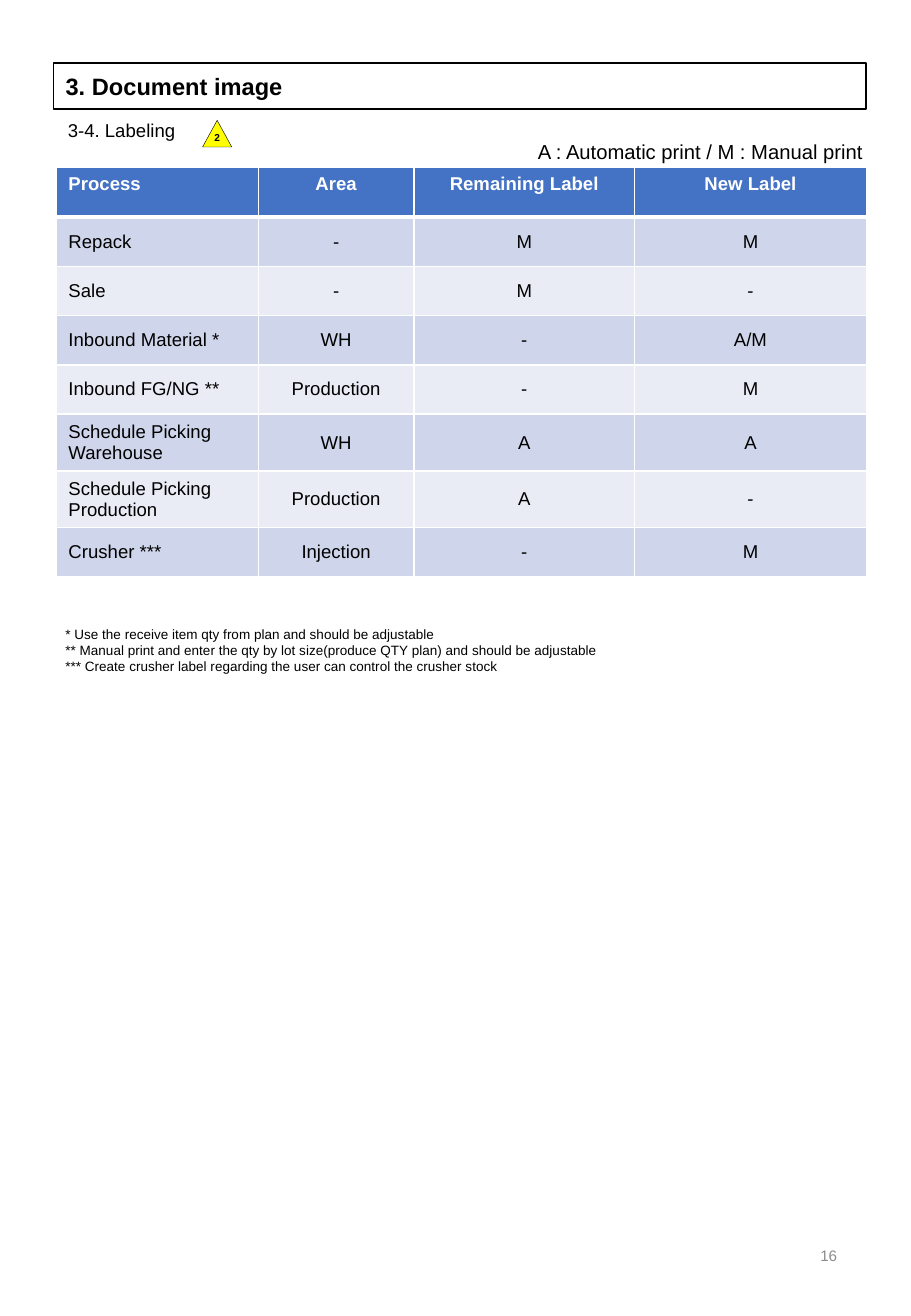
from dataclasses import dataclass

from lxml.etree import SubElement
from pptx import Presentation
from pptx.dml.color import RGBColor
from pptx.enum.shapes import MSO_SHAPE as SHAPE
from pptx.enum.text import MSO_ANCHOR as ANCHOR, MSO_AUTO_SIZE as AUTO, PP_ALIGN as ALIGN
from pptx.oxml.ns import qn
from pptx.util import Pt


@dataclass(frozen=True)
class Theme:
    """Colours, font and type sizes of the slide."""
    font: str = "Arial"
    black: str = "000000"
    white: str = "FFFFFF"
    grey: str = "8C8C8C"
    yellow: str = "FFFF00"
    header: str = "4472C4"
    bands: tuple = ("CFD5EA", "E9EBF5")
    title: int = 14
    legend: int = 12
    body: int = 11
    number: int = 9
    note: int = 8
    mark: int = 6


T = Theme()
COLUMNS = (119.8, 92.2, 130.8, 137.4)
ROW_HEIGHT = 29.2
LABELING = (
    ("Process", "Area", "Remaining Label", "New Label"),
    ("Repack", "-", "M", "M"),
    ("Sale", "-", "M", "-"),
    ("Inbound Material *", "WH", "-", "A/M"),
    ("Inbound FG/NG **", "Production", "-", "M"),
    ("Schedule Picking Warehouse", "WH", "A", "A"),
    ("Schedule Picking Production", "Production", "A", "-"),
    ("Crusher ***", "Injection", "-", "M"),
)
NOTES = (
    "* Use the receive item qty from plan and should be adjustable",
    "** Manual print and enter the qty by lot size(produce QTY plan) and should be adjustable",
    "*** Create crusher label regarding the user can control the crusher stock",
)


def rgb(value):
    """Return the colour object for a hex value."""
    return RGBColor.from_string(value)


def write(tf, lines, size, color=T.black, bold=False, align=ALIGN.LEFT):
    """Write one paragraph per line into a text frame."""
    for i, line in enumerate(lines):
        p = tf.add_paragraph() if i else tf.paragraphs[0]
        p.alignment = align
        r = p.add_run()
        r.text = line
        r.font.name, r.font.size, r.font.bold = T.font, Pt(size), bold
        r.font.color.rgb = rgb(color)


def outline(sp, width):
    """Give a shape a black line."""
    sp.line.color.rgb = rgb(T.black)
    sp.line.width = Pt(width)


def add_text(slide, box, lines, size, color=T.black, align=ALIGN.LEFT, anchor=ANCHOR.TOP):
    """Add a wrapping text box."""
    tf = slide.shapes.add_textbox(*map(Pt, box)).text_frame
    tf.word_wrap = True
    tf.vertical_anchor = anchor
    write(tf, lines, size, color, align=align)


def add_title(slide, box, text):
    """Place the framed title."""
    sp = slide.shapes.title
    sp.left, sp.top, sp.width, sp.height = map(Pt, box)
    outline(sp, 1)
    tf = sp.text_frame
    tf.auto_size = AUTO.NONE
    tf.vertical_anchor = ANCHOR.MIDDLE
    write(tf, [text], T.title, bold=True)


def add_heading(slide, box, text, mark):
    """Add the section heading with its revision triangle."""
    left, top, _, _ = box
    add_text(slide, box, [text], T.body)
    sp = slide.shapes.add_shape(
        SHAPE.ISOSCELES_TRIANGLE, Pt(left + 87), Pt(top + 4.3), Pt(17.3), Pt(15.8))
    sp.shadow.inherit = False
    sp.fill.solid()
    sp.fill.fore_color.rgb = rgb(T.yellow)
    outline(sp, 0.25)
    tf = sp.text_frame
    tf.margin_left = tf.margin_right = tf.margin_top = 0
    tf.margin_bottom = Pt(3.6)
    tf.vertical_anchor = ANCHOR.MIDDLE
    write(tf, [mark], T.mark, bold=True, align=ALIGN.CENTER)


def set_borders(cell, **widths):
    """Draw white cell borders, one point wide unless given by side."""
    tc_pr = cell._tc.get_or_add_tcPr()
    for side in "LRTB":
        ln = SubElement(tc_pr, qn(f"a:ln{side}"), w=str(Pt(widths.get(side, 1))))
        fill = SubElement(ln, qn("a:solidFill"))
        SubElement(fill, qn("a:srgbClr"), val=T.white)


def add_labeling_table(slide, left, top):
    """Add the table of label printing by process."""
    table = slide.shapes.add_table(
        len(LABELING), len(COLUMNS), Pt(left), Pt(top),
        Pt(sum(COLUMNS)), Pt(ROW_HEIGHT * len(LABELING))).table
    for column, width in zip(table.columns, COLUMNS):
        column.width = Pt(width)
    for i, texts in enumerate(LABELING):
        table.rows[i].height = Pt(ROW_HEIGHT)
        head = i == 0
        for j, text in enumerate(texts):
            cell = table.cell(i, j)
            set_borders(cell, B=3 if head else 1, T=3 if i == 1 else 1)
            cell.fill.solid()
            cell.fill.fore_color.rgb = rgb(T.header if head else T.bands[(i - 1) % 2])
            cell.vertical_anchor = ANCHOR.TOP if head else ANCHOR.MIDDLE
            write(cell.text_frame, [text], T.body, T.white if head else T.black,
                  head, ALIGN.CENTER if j else ALIGN.LEFT)


def main():
    """Build and save the slide."""
    prs = Presentation()
    prs.slide_width, prs.slide_height = Pt(540), Pt(779.76)
    slide = prs.slides.add_slide(prs.slide_layouts[5])
    add_title(slide, (31.7, 37.4, 481.7, 27.4), "3. Document image")
    add_heading(slide, (33.1, 67, 330, 20.9), "3-4. Labeling", "2")
    add_labeling_table(slide, 33.4, 99.4)
    add_text(slide, (31.7, 367.2, 340, 36), NOTES, T.note)
    add_text(slide, (311.8, 79.2, 222, 21.6),
             ["A : Automatic print / M : Manual print"], T.legend)
    add_text(slide, (381.6, 722.9, 121.7, 41.8), ["16"], T.number, T.grey,
             ALIGN.RIGHT, ANCHOR.MIDDLE)
    prs.save("out.pptx")


if __name__ == "__main__":
    main()
